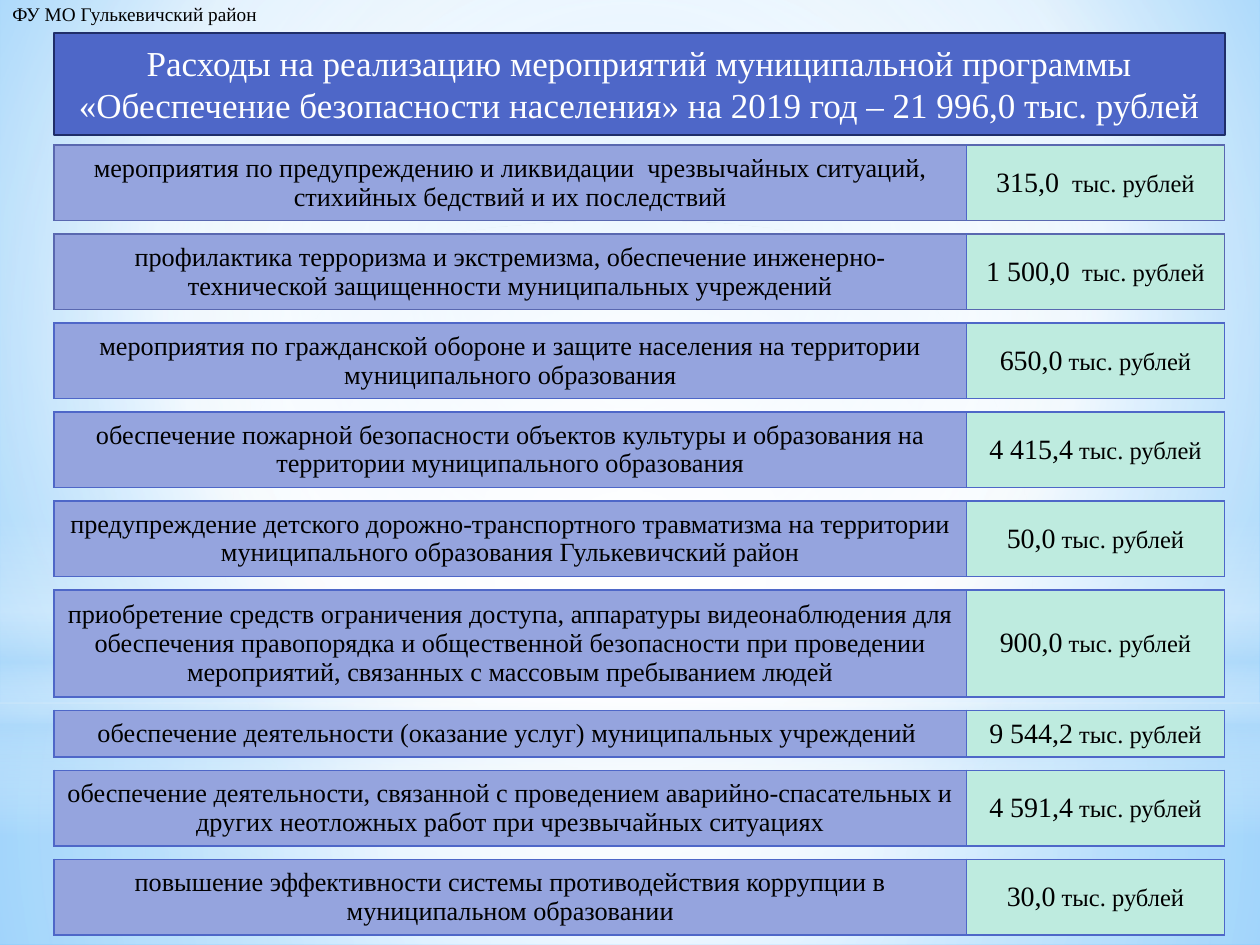
from dataclasses import dataclass
from pptx import Presentation
from pptx.dml.color import RGBColor
from pptx.enum.shapes import MSO_SHAPE as Shape
from pptx.enum.text import MSO_ANCHOR as Anchor, MSO_AUTO_SIZE as AutoSize, PP_ALIGN as Align
from pptx.oxml import parse_xml
from pptx.oxml.ns import nsdecls
from pptx.util import Inches, Pt


@dataclass(frozen=True)
class Theme:
    font: str = "Times New Roman"
    ink: str = "000000"
    white: str = "FFFFFF"
    haze: str = "B4DCFA"
    sky: str = "9ED5FF"
    deep_sky: str = "5BB9FF"
    banner: str = "4E67C8"
    banner_edge: str = "1F2E69"
    label: str = "95A4DE"
    amount: str = "BEEBDF"
    border: str = "4E67C8"
    soft_border: str = "5968B0"
    note_size: float = 11
    title_size: float = 20
    label_size: float = 15
    amount_size: float = 16
    unit_size: float = 14


THEME = Theme()
ROW_HEIGHTS = {1: 0.37, 2: 0.6, 3: 0.85}
LABEL_SHARE = 7.24 / 9.29
UNIT = " тыс. рублей"
EXPENSES = [
    ("мероприятия по предупреждению и ликвидации  чрезвычайных ситуаций, стихийных бедствий и их последствий",
     "315,0 ", UNIT, 2, THEME.soft_border),
    ("профилактика терроризма и экстремизма, обеспечение инженерно-технической защищенности муниципальных учреждений",
     "1 500,0", " " + UNIT, 2, THEME.soft_border),
    ("мероприятия по гражданской обороне и защите населения на территории муниципального образования",
     "650,0", UNIT, 2, THEME.border),
    ("обеспечение пожарной безопасности объектов культуры и образования на территории муниципального образования",
     "4 415,4", UNIT, 2, THEME.border),
    ("предупреждение детского дорожно-транспортного травматизма на территории муниципального образования Гулькевичский район",
     "50,0", UNIT, 2, THEME.border),
    ("приобретение средств ограничения доступа, аппаратуры видеонаблюдения для обеспечения правопорядка и "
     "общественной безопасности при проведении мероприятий, связанных с массовым пребыванием людей",
     "900,0", UNIT, 3, THEME.border),
    ("обеспечение деятельности (оказание услуг) муниципальных учреждений ",
     "9 544,2", UNIT, 1, THEME.border),
    ("обеспечение деятельности, связанной с проведением аварийно-спасательных и других неотложных работ при чрезвычайных ситуациях",
     "4 591,4", UNIT, 2, THEME.border),
    ("повышение эффективности системы противодействия коррупции в муниципальном образовании",
     "30,0", UNIT, 2, THEME.border),
]


def color(value):
    return RGBColor.from_string(value)


def style_font(font, size, ink):
    font.name = THEME.font
    font.size = Pt(size)
    font.color.rgb = color(ink)


def radial(left, top, right, bottom):
    return (f'<a:path path="circle"><a:fillToRect l="{left}000" t="{top}000" '
            f'r="{right}000" b="{bottom}000"/></a:path>')


def apply_gradient(fill, element, stops, direction):
    fill.solid()
    fill.fore_color.rgb = color(THEME.white)
    stop_list = "".join(
        f'<a:gs pos="{position}000"><a:srgbClr val="{value}">'
        f'<a:alpha val="{opacity}000"/></a:srgbClr></a:gs>'
        for position, value, opacity in stops)
    solid = element.xpath(".//a:solidFill")[0]
    solid.getparent().replace(solid, parse_xml(
        f'<a:gradFill {nsdecls("a")} rotWithShape="1"><a:gsLst>{stop_list}</a:gsLst>{direction}</a:gradFill>'))


def add_backdrop(slide, width, height):
    white, haze = THEME.white, THEME.haze
    apply_gradient(slide.background.fill, slide.element,
                   [(0, THEME.sky, 100), (60, white, 100), (100, THEME.deep_sky, 100)],
                   radial(20, 10, 20, 60))
    center = radial(50, 50, 50, 50)
    layers = [
        (Shape.RECTANGLE, 0.744, 0.256, [(0, white, 91), (37, white, 76), (100, haze, 79)], center),
        (Shape.RECTANGLE, 0, 0.744, [(0, white, 89), (48, white, 62), (100, haze, 79)], center),
        (Shape.RECTANGLE, 0.55, 0.333,
         [(0, white, 0), (29, white, 30), (45, haze, 40), (55, white, 26), (65, haze, 60), (100, white, 0)],
         '<a:lin ang="5400000" scaled="0"/>'),
        (Shape.OVAL, 0.233, 0.744, [(0, white, 100), (56, white, 0)], center),
    ]
    for kind, top, share, stops, direction in layers:
        layer = slide.shapes.add_shape(kind, 0, int(height * top), width, int(height * share))
        layer.shadow.inherit = False
        layer.line.fill.background()
        apply_gradient(layer.fill, layer.element, stops, direction)


def add_note(slide, left, top, width, height):
    note = slide.shapes.add_textbox(left, top, width, height)
    frame = note.text_frame
    frame.word_wrap = False
    frame.auto_size = AutoSize.SHAPE_TO_FIT_TEXT
    paragraph = frame.paragraphs[0]
    paragraph.text = "ФУ МО Гулькевичский район"
    style_font(paragraph.font, THEME.note_size, THEME.ink)


def add_banner(slide, left, top, width, height):
    title = slide.shapes.title
    title.left, title.top, title.width, title.height = left, top, width, height
    title.element.spPr.append(parse_xml(
        f'<a:prstGeom {nsdecls("a")} prst="roundRect"><a:avLst/></a:prstGeom>'))
    title.fill.solid()
    title.fill.fore_color.rgb = color(THEME.banner)
    title.line.color.rgb = color(THEME.banner_edge)
    title.line.width = Pt(1.25)
    frame = title.text_frame
    frame.word_wrap = True
    frame.auto_size = AutoSize.NONE
    frame.vertical_anchor = Anchor.MIDDLE
    paragraph = frame.paragraphs[0]
    paragraph.text = ("Расходы на реализацию мероприятий муниципальной программы "
                      "«Обеспечение безопасности населения» на 2019 год – 21 996,0 тыс. рублей")
    paragraph.alignment = Align.CENTER
    style_font(paragraph.font, THEME.title_size, THEME.white)
    tree = title.element.getparent()
    tree.append(title.element)


def fill_cell(cell, runs, fill, outer, divider_side):
    cell.vertical_anchor = Anchor.MIDDLE
    paragraph = cell.text_frame.paragraphs[0]
    paragraph.alignment = Align.CENTER
    for text, size in runs:
        run = paragraph.add_run()
        run.text = text
        style_font(run.font, size, THEME.ink)
    properties = cell._tc.get_or_add_tcPr()
    for side in ("L", "R", "T", "B"):
        value = THEME.border if side == divider_side else outer
        properties.append(parse_xml(
            f'<a:ln{side} {nsdecls("a")} w="{Pt(1)}"><a:solidFill><a:srgbClr val="{value}"/>'
            f'</a:solidFill></a:ln{side}>'))
    cell.fill.solid()
    cell.fill.fore_color.rgb = color(fill)


def add_expense(slide, left, top, width, height, expense):
    label, amount, unit, _, outer = expense
    table = slide.shapes.add_table(1, 2, left, top, width, height).table
    table.first_row = table.horz_banding = False
    table.columns[0].width = int(width * LABEL_SHARE)
    table.columns[1].width = width - table.columns[0].width
    fill_cell(table.cell(0, 0), [(label, THEME.label_size)], THEME.label, outer, "R")
    fill_cell(table.cell(0, 1), [(amount, THEME.amount_size), (unit, THEME.unit_size)],
              THEME.amount, outer, "L")


def add_expenses(slide, left, top, width, height):
    heights = [Inches(ROW_HEIGHTS[expense[3]]) for expense in EXPENSES]
    gap = (height - sum(heights)) // (len(heights) - 1)
    for expense, row_height in zip(EXPENSES, heights):
        add_expense(slide, left, top, width, row_height, expense)
        top += row_height + gap


def main():
    presentation = Presentation()
    presentation.slide_width, presentation.slide_height = Inches(10), Inches(7.5)
    slide = presentation.slides.add_slide(presentation.slide_layouts[5])
    left, width = Inches(0.43), Inches(9.29)
    add_backdrop(slide, presentation.slide_width, presentation.slide_height)
    add_note(slide, 0, Inches(-0.03), Inches(2.18), Inches(0.29))
    add_banner(slide, left, Inches(0.26), width, Inches(0.81))
    add_expenses(slide, left, Inches(1.15), width, Inches(6.27))
    presentation.save("out.pptx")


if __name__ == "__main__":
    main()
